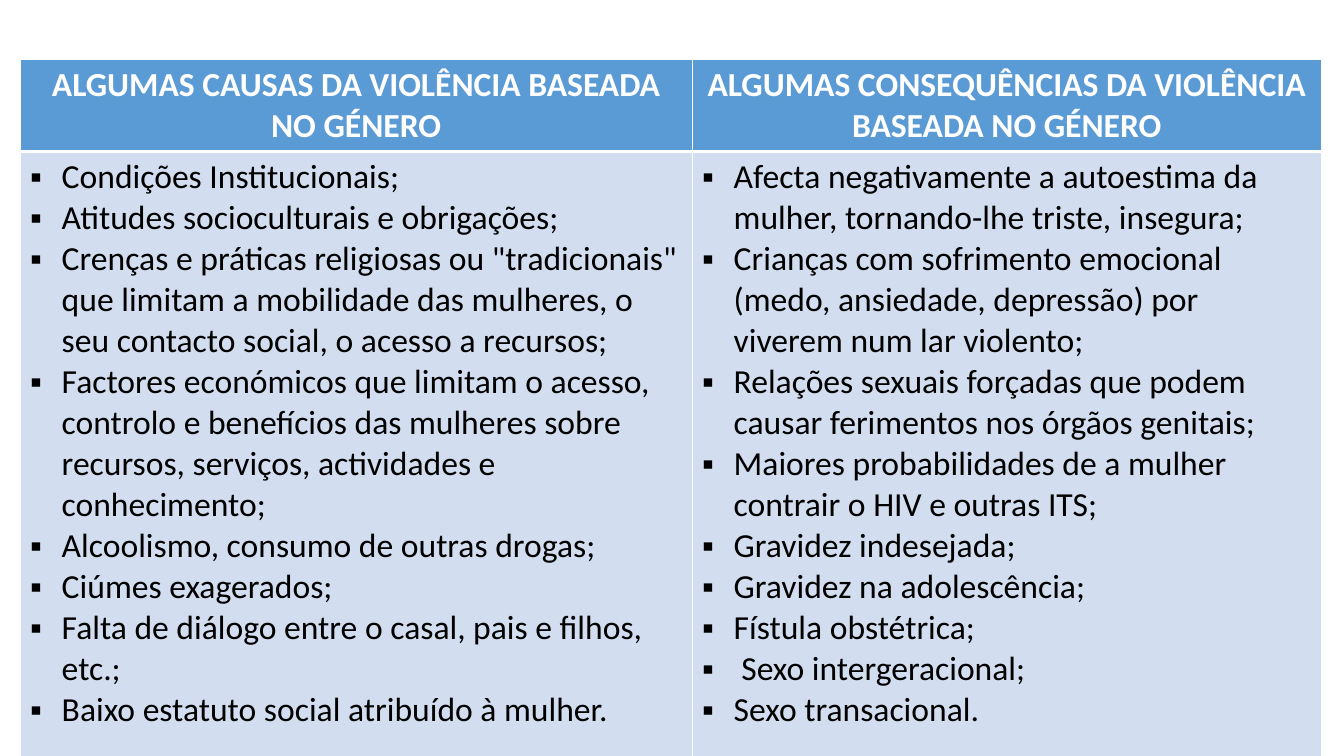
from lxml.etree import SubElement
from pptx import Presentation
from pptx.dml.color import RGBColor
from pptx.enum.text import PP_ALIGN as Align
from pptx.oxml.ns import qn
from pptx.util import Pt


def color(value):
    return RGBColor.from_string(value)


def set_border(cell, side, width):
    line = SubElement(cell._tc.get_or_add_tcPr(), qn(f"a:ln{side}"), w=str(Pt(width)))
    fill = SubElement(line, qn("a:solidFill"))
    SubElement(fill, qn("a:srgbClr"), val="FFFFFF")


columns = [
    (
        "ALGUMAS CAUSAS DA VIOLÊNCIA BASEADA NO GÉNERO",
        [
            "Condições Institucionais;",
            "Atitudes socioculturais e obrigações;",
            'Crenças e práticas religiosas ou "tradicionais" que limitam a mobilidade '
            "das mulheres, o seu contacto social, o acesso a recursos;",
            "Factores económicos que limitam o acesso, controlo e benefícios das "
            "mulheres sobre recursos, serviços, actividades e conhecimento;",
            "Alcoolismo, consumo de outras drogas;",
            "Ciúmes exagerados;",
            "Falta de diálogo entre o casal, pais e filhos, etc.;",
            "Baixo estatuto social atribuído à mulher.",
        ],
    ),
    (
        "ALGUMAS CONSEQUÊNCIAS DA VIOLÊNCIA BASEADA NO GÉNERO",
        [
            "Afecta negativamente a autoestima da mulher, tornando-lhe triste, insegura;",
            "Crianças com sofrimento emocional (medo, ansiedade, depressão) por "
            "viverem num lar violento;",
            "Relações sexuais forçadas que podem causar ferimentos nos órgãos genitais;",
            "Maiores probabilidades de a mulher contrair o HIV e outras ITS;",
            "Gravidez indesejada;",
            "Gravidez na adolescência;",
            "Fístula obstétrica;",
            " Sexo intergeracional;",
            "Sexo transacional.",
        ],
    ),
]

deck = Presentation()
deck.slide_width, deck.slide_height = Pt(960), Pt(540)
page = deck.slides.add_slide(deck.slide_layouts[6])

table = page.shapes.add_table(2, 2, Pt(14.4), Pt(42.5), Pt(929.5), Pt(499)).table
table.columns[0].width, table.columns[1].width = Pt(480), Pt(449.5)
table.rows[0].height, table.rows[1].height = Pt(60.5), Pt(438.5)

for column, (heading, items) in enumerate(columns):
    for row, lines in enumerate([[heading], items]):
        is_header = row == 0
        cell = table.cell(row, column)
        for side in "LRTB":
            thick = (row, side) in [(0, "B"), (1, "T")]
            set_border(cell, side, 3 if thick else 1)
        cell.fill.solid()
        cell.fill.fore_color.rgb = color("5B9BD5" if is_header else "D2DEEF")

        cell.text_frame.text = "\n".join(lines)
        for para in cell.text_frame.paragraphs:
            if is_header:
                para.alignment = Align.CENTER
            else:
                properties = para._p.get_or_add_pPr()
                properties.set("marL", str(Pt(22.5)))
                properties.set("indent", str(Pt(-22.5)))
                SubElement(properties, qn("a:buFont"), typeface="Arial")
                SubElement(properties, qn("a:buChar"), char="▪")
            font = para.runs[0].font
            font.name = "Calibri"
            font.size = Pt(24)
            font.bold = is_header
            font.color.rgb = color("FFFFFF" if is_header else "000000")

deck.save("out.pptx")
